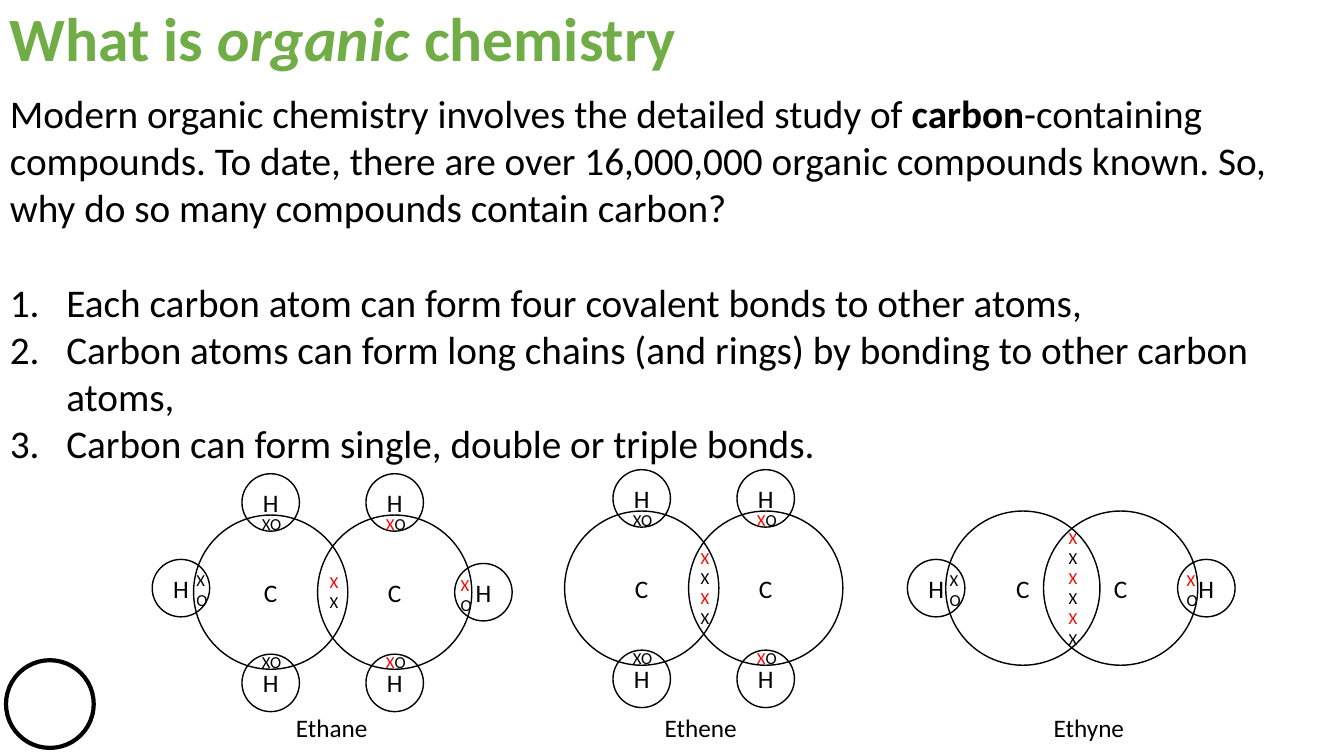
from pptx import Presentation
from pptx.dml.color import RGBColor
from pptx.enum.shapes import MSO_SHAPE
from pptx.enum.text import MSO_ANCHOR, PP_ALIGN
from pptx.oxml.xmlchemy import OxmlElement
from pptx.util import Inches, Pt

OVAL = MSO_SHAPE.OVAL
MIDDLE, TOP = MSO_ANCHOR.MIDDLE, MSO_ANCHOR.TOP
CENTER, LEFT = PP_ALIGN.CENTER, PP_ALIGN.LEFT

FONT = "Calibri"
COLORS = {"black": "000000", "white": "FFFFFF", "red": "FF0000", "green": "70AD47"}

# Runs are (text, style)
TITLE = [("What is ", ""), ("organic", "italic"), (" chemistry", "")]
INTRO = [
    ("Modern organic chemistry involves the detailed study of ", ""),
    ("carbon", "bold"),
    ("-containing compounds. To date, there are over 16,000,000 organic compounds "
     "known. So, why do so many compounds contain carbon?", ""),
]
REASONS = [
    "Each carbon atom can form four covalent bonds to other atoms,",
    "Carbon atoms can form long chains (and rings) by bonding to other carbon atoms,",
    "Carbon can form single, double or triple bonds.",
]

# carbons: left edges; sides: (hydrogen left, top, electrons left, top) for each carbon
MOLECULES = [
    {"name": "Ethane", "middle": 3.29, "carbons": (1.92, 3.15), "top": 5.11, "bonds": 1,
     "upright": True, "sides": [(1.51, 5.55, 1.85, 5.6), (4.51, 5.59, 4.47, 5.65)]},
    {"name": "Ethene", "middle": 6.95, "carbons": (5.6, 6.83), "top": 5.07, "bonds": 2,
     "upright": True, "sides": []},
    {"name": "Ethyne", "middle": 10.8, "carbons": (9.38, 10.35), "top": 5.07, "bonds": 3,
     "upright": False, "sides": [(9, 5.55, 9.32, 5.6), (11.68, 5.55, 11.67, 5.6)]},
]

CARBON, HYDROGEN = 1.53, 0.57
PAIR_WIDTH, PAIR_HEIGHT = 0.46, 0.3
COLUMN_WIDTH, ELECTRON_HEIGHT = 0.26, 0.2
# Offsets from the carbon's top: (hydrogen, electron pair)
UPRIGHT_OFFSETS = [(-0.41, -0.06), (1.38, 1.31)]
CAPTION_WIDTH = 1.6

deck = Presentation()
deck.slide_width, deck.slide_height = Inches(13.33), Inches(7.5)
page = deck.slides.add_slide(deck.slide_layouts[6])


def add_span(para, text, size, color="black", bold=False, italic=False):
    span = para.add_run()
    span.text = text
    span.font.name = FONT
    span.font.size = Pt(size)
    span.font.bold = bold
    span.font.italic = italic
    span.font.color.rgb = RGBColor.from_string(COLORS[color])


def add_box(left, top, width, height, anchor=TOP, align=LEFT):
    box = page.shapes.add_textbox(Inches(left), Inches(top), Inches(width), Inches(height))
    frame = box.text_frame
    frame.word_wrap = True
    frame.vertical_anchor = anchor
    frame.paragraphs[0].alignment = align
    return frame


def add_circle(left, top, size, label="", line=1, fill=None):
    circle = page.shapes.add_shape(OVAL, Inches(left), Inches(top), Inches(size), Inches(size))
    circle.shadow.inherit = False
    if fill:
        circle.fill.solid()
        circle.fill.fore_color.rgb = RGBColor.from_string(COLORS[fill])
    else:
        circle.fill.background()
    circle.line.color.rgb = RGBColor.from_string(COLORS["black"])
    circle.line.width = Pt(line)
    if label:
        frame = circle.text_frame
        frame.margin_left = frame.margin_right = frame.margin_top = frame.margin_bottom = 0
        frame.vertical_anchor = MIDDLE
        frame.paragraphs[0].alignment = CENTER
        add_span(frame.paragraphs[0], label, 18)


def add_electrons(left, top, width, height, electrons):
    """Electrons are (symbol, colour) pairs; a narrow box stacks them."""
    para = add_box(left, top, width, height).paragraphs[0]
    for symbol, color in electrons:
        add_span(para, symbol, 12, color)


def number_paragraph(para):
    properties = para._p.get_or_add_pPr()
    properties.set("marL", str(Inches(0.56)))
    properties.set("indent", str(-Inches(0.56)))
    for tag, name, value in (("a:buFont", "typeface", "+mj-lt"),
                             ("a:buAutoNum", "type", "arabicPeriod")):
        element = OxmlElement(tag)
        element.set(name, value)
        properties.append(element)


def draw_molecule(molecule):
    top, carbons = molecule["top"], molecule["carbons"]
    pairs = ([("XO", "black")], [("X", "red"), ("O", "black")])

    for left in carbons:
        add_circle(left, top, CARBON, "C")
    if molecule["upright"]:
        for left, pair in zip(carbons, pairs):
            for hydrogen_offset, pair_offset in UPRIGHT_OFFSETS:
                add_circle(left + (CARBON - HYDROGEN) / 2, top + hydrogen_offset,
                           HYDROGEN, "H")
                add_electrons(left + 0.58, top + pair_offset, PAIR_WIDTH, PAIR_HEIGHT, pair)
    for (left, height, pair_left, pair_top), pair in zip(molecule["sides"], pairs):
        add_circle(left, height, HYDROGEN, "H")
        add_electrons(pair_left, pair_top, COLUMN_WIDTH, 0.5, pair)

    shared = [("X", "red"), ("X", "black")] * molecule["bonds"]
    column_height = 0.1 + ELECTRON_HEIGHT * len(shared)
    overlap_middle = (carbons[0] + CARBON + carbons[1]) / 2
    add_electrons(overlap_middle - COLUMN_WIDTH / 2, top + (CARBON - column_height) / 2,
                  COLUMN_WIDTH, column_height, shared)

    caption = add_box(molecule["middle"] - CAPTION_WIDTH / 2, 7.02, CAPTION_WIDTH, 0.4,
                      align=CENTER)
    add_span(caption.paragraphs[0], molecule["name"], 18)


add_circle(0.06, 6.55, 0.87, line=3, fill="white")

body = add_box(0, 0.84, 13.33, 3.87)
for text, style in INTRO:
    add_span(body.paragraphs[0], text, 28, bold=style == "bold")
for index, reason in enumerate(REASONS):
    para = body.add_paragraph()
    if index == 0:
        para.space_before = Pt(34)
    number_paragraph(para)
    add_span(para, reason, 28)

for molecule in MOLECULES:
    draw_molecule(molecule)

heading = add_box(0, 0, 12.42, 0.83, anchor=MIDDLE).paragraphs[0]
heading.line_spacing = 0.9
for text, style in TITLE:
    add_span(heading, text, 44, "green", bold=True, italic=style == "italic")

deck.save("out.pptx")
